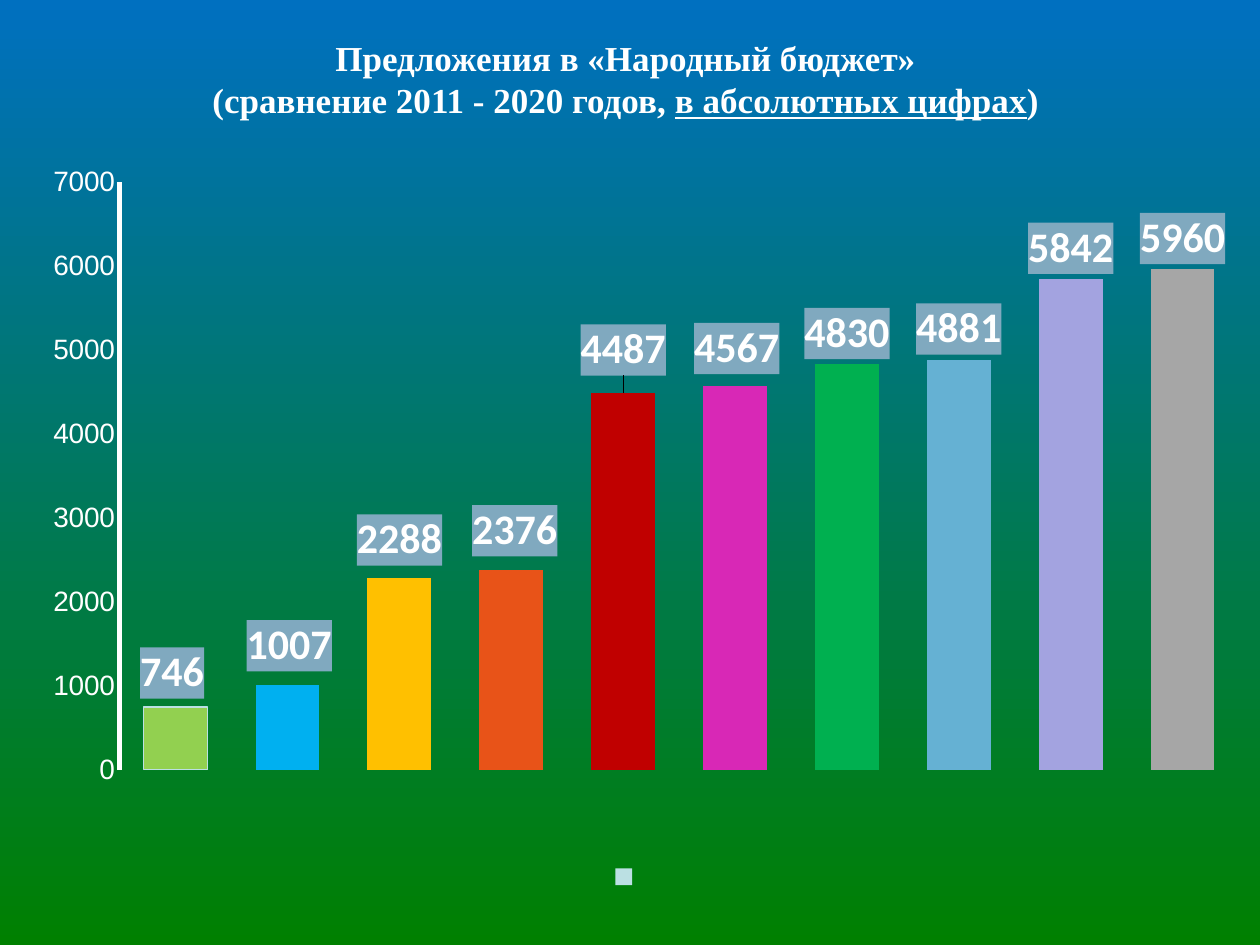
from lxml import etree
from pptx import Presentation
from pptx.chart.data import CategoryChartData
from pptx.dml.color import RGBColor
from pptx.enum.chart import XL_CHART_TYPE, XL_LABEL_POSITION, XL_LEGEND_POSITION, XL_TICK_MARK
from pptx.enum.text import MSO_ANCHOR, PP_ALIGN
from pptx.oxml import parse_xml
from pptx.oxml.ns import nsdecls
from pptx.util import Pt

COLUMN = XL_CHART_TYPE.COLUMN_CLUSTERED
ABOVE = XL_LABEL_POSITION.OUTSIDE_END
BOTTOM = XL_LEGEND_POSITION.BOTTOM
NO_TICK = XL_TICK_MARK.NONE
MIDDLE = MSO_ANCHOR.MIDDLE
CENTER = PP_ALIGN.CENTER

WHITE = "FFFFFF"
BARS = [
    (746, "92D050"), (1007, "00B0F0"), (2288, "FFC000"), (2376, "E85318"),
    (4487, "C00000"), (4567, "D828B6"), (4830, "00B050"), (4881, "65B1D3"),
    (5842, "A3A3E0"), (5960, "A6A6A6"),
]
SHIFTS = [(-2, -2), (1, -5), (0, -4), (2, -5), (0, -7), (1, -4)]


def color(code):
    return RGBColor.from_string(code)


def style(font, size, face, code=WHITE, bold=False):
    font.size = Pt(size)
    font.name = face
    font.bold = bold
    font.color.rgb = color(code)


def write(para, text, line=False, **look):
    run = para.add_run()
    run.text = text
    run.font.underline = line
    style(run.font, **look)


def paint(slide, top, base):
    fill = slide.background.fill
    fill.gradient()
    fill.gradient_angle = 270
    for stop, code, place in zip(fill.gradient_stops, (top, base), (0, 1)):
        stop.color.rgb = color(code)
        stop.position = place


def title(slide, box):
    frame = slide.shapes.add_textbox(*box).text_frame
    frame.word_wrap = True
    frame.vertical_anchor = MIDDLE
    look = dict(size=20, face="Times New Roman", bold=True)
    first, second = frame.paragraphs[0], frame.add_paragraph()
    first.alignment = second.alignment = CENTER
    write(first, "Предложения в «Народный бюджет»", **look)
    write(second, "(сравнение 2011 - 2020 годов, ", **look)
    write(second, "в абсолютных цифрах", line=True, **look)
    write(second, ")", **look)


def layout(x, y, size=None):
    parts = {"x": x, "y": y}
    modes = ""
    if size:
        parts.update(w=size[0], h=size[1])
        modes = '<c:layoutTarget val="inner"/><c:xMode val="edge"/><c:yMode val="edge"/>'
    vals = "".join(f'<c:{key} val="{val:.4f}"/>' for key, val in parts.items())
    return parse_xml(
        f'<c:layout {nsdecls("c")}><c:manualLayout>{modes}{vals}</c:manualLayout></c:layout>')


def label(series, box):
    look = dict(size=24, face="Calibri", bold=True)
    tags = series.data_labels
    tags.show_value = True
    tags.position = ABOVE
    style(tags.font, **look)
    for spot in range(len(SHIFTS)):
        tag = series.points[spot].data_label
        style(tag.font, **look)
        tag.position = ABOVE
    root = series.data_labels._element
    for node, (x, y) in zip(root.xpath("c:dLbl"), SHIFTS):
        node.xpath("c:idx")[0].addnext(layout(Pt(x) / box[2], Pt(y) / box[3]))
    for text in root.xpath(".//c:txPr"):
        text.addprevious(parse_xml(
            f'<c:spPr {nsdecls("c", "a")}><a:solidFill><a:srgbClr val="80A9BF"/>'
            '</a:solidFill></c:spPr>'))


def graph(slide, box):
    data = CategoryChartData()
    data.categories = [str(num) for num in range(1, len(BARS) + 1)]
    data.add_series(" ", [val for val, code in BARS])
    chart = slide.shapes.add_chart(COLUMN, *box, data).chart
    chart.has_title = False
    style(chart.font, 18, "Arial", "000000")
    chart.has_legend = True
    chart.legend.position = BOTTOM
    chart.legend.include_in_layout = False
    style(chart.legend.font, 16, "Calibri", bold=True)

    chart.category_axis.visible = False
    axis = chart.value_axis
    axis.minimum_scale, axis.maximum_scale, axis.major_unit = 0, 7000, 1000
    axis.has_major_gridlines = False
    axis.major_tick_mark = axis.minor_tick_mark = NO_TICK
    axis.format.line.color.rgb = color(WHITE)
    axis.format.line.width = Pt(3)
    style(axis.tick_labels.font, 16, "Arial")

    plot = chart.plots[0]
    plot.gap_width = 75
    plot.vary_by_categories = False
    series = plot.series[0]
    series.format.fill.solid()
    series.format.fill.fore_color.rgb = color("BBE0E3")
    for spot, (val, code) in enumerate(BARS):
        fill = series.points[spot].format.fill
        fill.solid()
        fill.fore_color.rgb = color(code)
    edge = series.points[0].format.line
    edge.color.rgb = color("BBE0E3")
    edge.width = Pt(0.75)
    label(series, box)

    area = chart._chartSpace.xpath("c:chart/c:plotArea")[0]
    for old in area.xpath("c:layout"):
        area.remove(old)
    area.insert(0, layout(0.095, 0.036, (0.888, 0.79)))
    etree.cleanup_namespaces(area)


def main():
    deck = Presentation()
    deck.slide_width, deck.slide_height = Pt(720), Pt(540)
    slide = deck.slides.add_slide(deck.slide_layouts[6])
    paint(slide, "0070C0", "008000")
    title(slide, (Pt(14.4), Pt(0), Pt(686), Pt(90)))
    graph(slide, (Pt(0), Pt(88.5), Pt(720), Pt(425.5)))
    deck.save("out.pptx")


if __name__ == "__main__":
    main()
